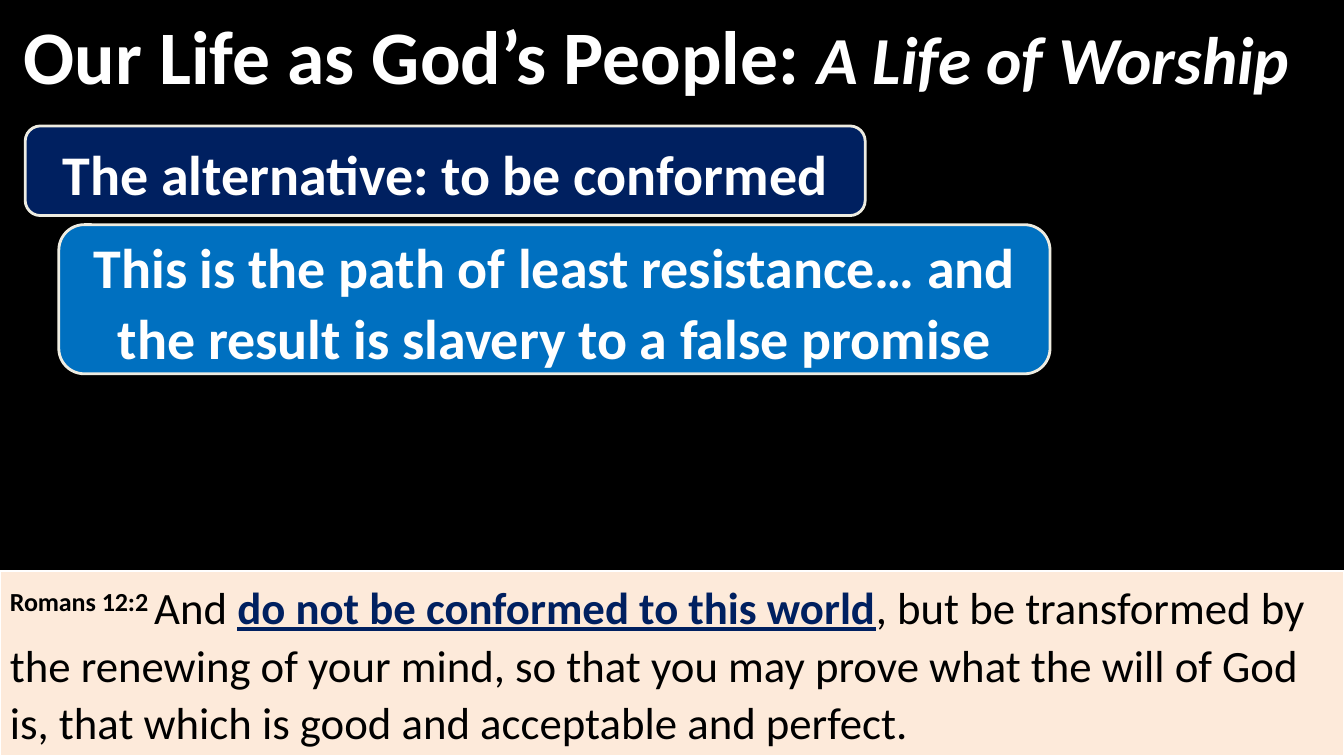
from pptx import Presentation
from pptx.dml.color import RGBColor
from pptx.enum.shapes import MSO_SHAPE
from pptx.enum.text import MSO_ANCHOR, PP_ALIGN
from pptx.util import Pt

RECT, CALLOUT = MSO_SHAPE.RECTANGLE, MSO_SHAPE.ROUNDED_RECTANGULAR_CALLOUT
TOP, MIDDLE = MSO_ANCHOR.TOP, MSO_ANCHOR.MIDDLE
LEFT, CENTER = PP_ALIGN.LEFT, PP_ALIGN.CENTER

# Content
FONT = "Calibri"
BLACK, WHITE, NAVY, BLUE = "000000", "FFFFFF", "002060", "0070C0"
CREAM, PEACH = "EEECE1", "FDEADA"
SLIDE_W, SLIDE_H = 960, 540

TITLE = [
    ("Our Life as God’s People: ", {"size": 54}),
    ("A Life of Worship", {"size": 48, "italic": True}),
]
CALLOUTS = [  # text, fill, (left, top, width, height)
    ("The alternative: to be conformed", NAVY, (18, 90, 600, 64)),
    ("This is the path of least resistance… and the result is slavery to a false promise",
     BLUE, (42, 160.5, 708, 106.5)),
]
VERSE = [
    ("Romans 12:2 ", {"bold": True, "raised": True}),
    ("And ", {}),
    ("do not be conformed to this world", {"bold": True, "underline": True, "color": NAVY}),
    (", but be transformed by the renewing of your mind, so that you may prove "
     "what the will of God is, that which is good and acceptable and perfect.", {}),
]
CALLOUT_TIP = (-0.22, 0.5, 0.17)
TITLE_H, VERSE_H = 77, 132
LINE_SPACING = 1.07


def rgb(value):
    return RGBColor.from_string(value)


def add_panel(kind, box, fill, line=None, line_width=0):
    panel = slide.shapes.add_shape(kind, *(Pt(v) for v in box))
    panel.shadow.inherit = False
    panel.fill.solid()
    panel.fill.fore_color.rgb = rgb(fill)
    if line:
        panel.line.color.rgb = rgb(line)
        panel.line.width = Pt(line_width)
    else:
        panel.line.fill.background()
    return panel


def write(panel, runs, size, color, bold, align, anchor, spacing=None):
    frame = panel.text_frame
    frame.word_wrap = True
    frame.vertical_anchor = anchor
    paragraph = frame.paragraphs[0]
    paragraph.alignment = align
    paragraph.line_spacing = spacing
    font = paragraph.font
    font.name, font.size, font.bold = FONT, Pt(size), bold
    font.color.rgb = rgb(color)
    for text, style in runs:
        run = paragraph.add_run()
        run.text = text
        run.font.name = FONT
        run.font.size = Pt(style.get("size", size))
        run.font.bold = style.get("bold", bold)
        run.font.italic = style.get("italic")
        run.font.underline = style.get("underline")
        run.font.color.rgb = rgb(style.get("color", color))
        if style.get("raised"):
            run.font._element.set("baseline", "30000")


# Slide
prs = Presentation()
prs.slide_width, prs.slide_height = Pt(SLIDE_W), Pt(SLIDE_H)
slide = prs.slides.add_slide(prs.slide_layouts[6])
slide.background.fill.solid()
slide.background.fill.fore_color.rgb = rgb(BLACK)

# Title band
title = add_panel(RECT, (0, 0, SLIDE_W, TITLE_H), BLACK)
title.text_frame.margin_left = Pt(17)
write(title, TITLE, 54, WHITE, True, LEFT, MIDDLE)

# Callouts
for text, fill, box in CALLOUTS:
    callout = add_panel(CALLOUT, box, fill, CREAM, 2)
    for i, value in enumerate(CALLOUT_TIP):
        callout.adjustments[i] = value
    write(callout, [(text, {})], 40, WHITE, True, CENTER, MIDDLE, LINE_SPACING)

# Verse along the bottom edge
verse = add_panel(RECT, (0, SLIDE_H - VERSE_H, SLIDE_W, VERSE_H), PEACH, WHITE, 1.5)
write(verse, VERSE, 32, BLACK, False, LEFT, TOP, LINE_SPACING)

prs.save("out.pptx")
